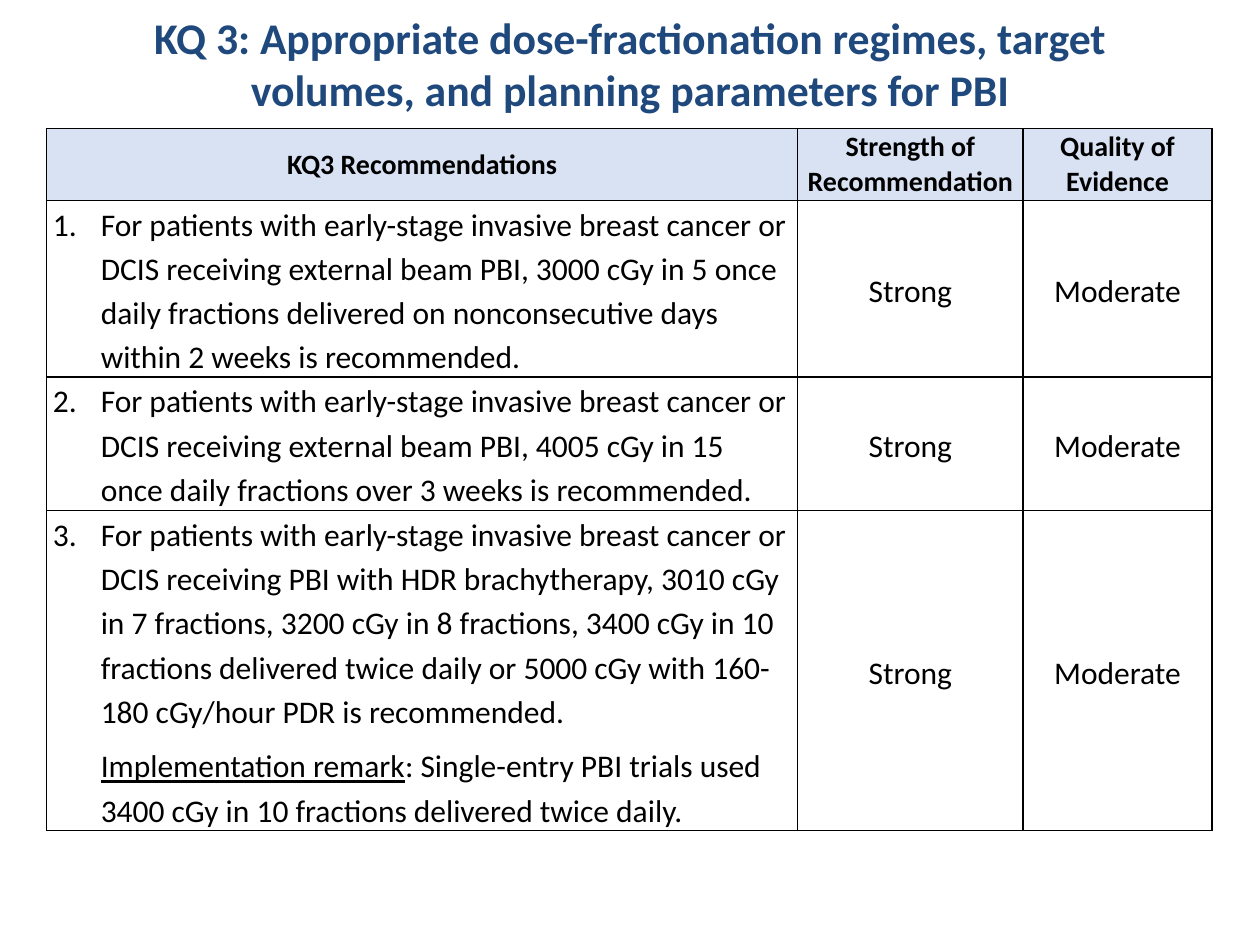
"""Build the KQ 3 slide: a title above a table of graded PBI recommendations."""
from lxml.etree import SubElement
from pptx import Presentation
from pptx.dml.color import RGBColor
from pptx.enum.text import MSO_ANCHOR as Anchor, PP_ALIGN as Align
from pptx.oxml.ns import qn
from pptx.util import Inches, Pt


def style(para, size, color="000000", bold=False):
    para.font.name = "Calibri"
    para.font.size = Pt(size)
    para.font.bold = bold
    para.font.color.rgb = RGBColor.from_string(color)


def prepare_cell(cell, anchor):
    cell.margin_left = cell.margin_right = Inches(0.05)
    cell.margin_top = cell.margin_bottom = 0
    cell.vertical_anchor = anchor
    properties = cell._tc.get_or_add_tcPr()
    for side in ("a:lnL", "a:lnR", "a:lnT", "a:lnB"):
        line = SubElement(properties, qn(side), w=str(Pt(1)))
        SubElement(SubElement(line, qn("a:solidFill")), qn("a:srgbClr"), val="000000")


headers = ["KQ3 Recommendations", "Strength of Recommendation", "Quality of Evidence"]
column_widths = [5.96, 1.79, 1.5]
row_heights = [0.57, 1.4, 1.06, 2.54]
recommendations = [
    "For patients with early-stage invasive breast cancer or DCIS receiving external "
    "beam PBI, 3000 cGy in 5 once daily fractions delivered on nonconsecutive days "
    "within 2 weeks is recommended.",
    "For patients with early-stage invasive breast cancer or DCIS receiving external "
    "beam PBI, 4005 cGy in 15 once daily fractions over 3 weeks is recommended.",
    "For patients with early-stage invasive breast cancer or DCIS receiving PBI with "
    "HDR brachytherapy, 3010 cGy in 7 fractions, 3200 cGy in 8 fractions, 3400 cGy in "
    "10 fractions delivered twice daily or 5000 cGy with 160-180 cGy/hour PDR is "
    "recommended.",
]

deck = Presentation()
deck.slide_width, deck.slide_height = Inches(10), Inches(7.5)
page = deck.slides.add_slide(deck.slide_layouts[5])

title = page.shapes.title
title.left, title.top, title.width, title.height = Inches(0.5), 0, Inches(9), Inches(1)
title.text_frame.text = ("KQ 3: Appropriate dose-fractionation regimes, target volumes, "
                         "and planning parameters for PBI")
title.text_frame.vertical_anchor = Anchor.MIDDLE
title_para = title.text_frame.paragraphs[0]
title_para.alignment = Align.CENTER
style(title_para, 25, "1F497D", True)

table = page.shapes.add_table(len(row_heights), len(column_widths), Inches(0.37), Inches(1.02),
                              Inches(sum(column_widths)), Inches(sum(row_heights))).table
table.first_row = table.horz_banding = False
for column, width in zip(table.columns, column_widths):
    column.width = Inches(width)
for row, height in zip(table.rows, row_heights):
    row.height = Inches(height)

for cell, header in zip(table.rows[0].cells, headers):
    prepare_cell(cell, Anchor.MIDDLE)
    cell.fill.solid()
    cell.fill.fore_color.rgb = RGBColor.from_string("D9E2F3")
    cell.text = header
    para = cell.text_frame.paragraphs[0]
    para.alignment = Align.CENTER
    style(para, 16, bold=True)

for number, recommendation in enumerate(recommendations, 1):
    advice, *grades = table.rows[number].cells
    prepare_cell(advice, Anchor.TOP)
    advice.fill.background()
    advice.text = recommendation
    para = advice.text_frame.paragraphs[0]
    para.line_spacing = 1.15
    properties = para._p.get_or_add_pPr()
    properties.set("marL", str(Inches(0.38)))
    properties.set("indent", str(Inches(-0.38)))
    SubElement(properties, qn("a:buAutoNum"), type="arabicPeriod", startAt=str(number))
    style(para, 18)
    for cell, grade in zip(grades, ["Strong", "Moderate"]):
        prepare_cell(cell, Anchor.MIDDLE)
        cell.fill.background()
        cell.text = grade
        para = cell.text_frame.paragraphs[0]
        para.alignment = Align.CENTER
        para.line_spacing = 1.15
        style(para, 18)

advice.text_frame.paragraphs[0].space_after = Pt(6)
remark = advice.text_frame.add_paragraph()
remark.line_spacing = 1.15
remark._p.get_or_add_pPr().set("marL", str(Inches(0.38)))
style(remark, 18)
span = remark.add_run()
span.text = "Implementation remark"
span.font.underline = True
remark.add_run().text = ": Single-entry PBI trials used 3400 cGy in 10 fractions delivered twice daily."

deck.save("out.pptx")
